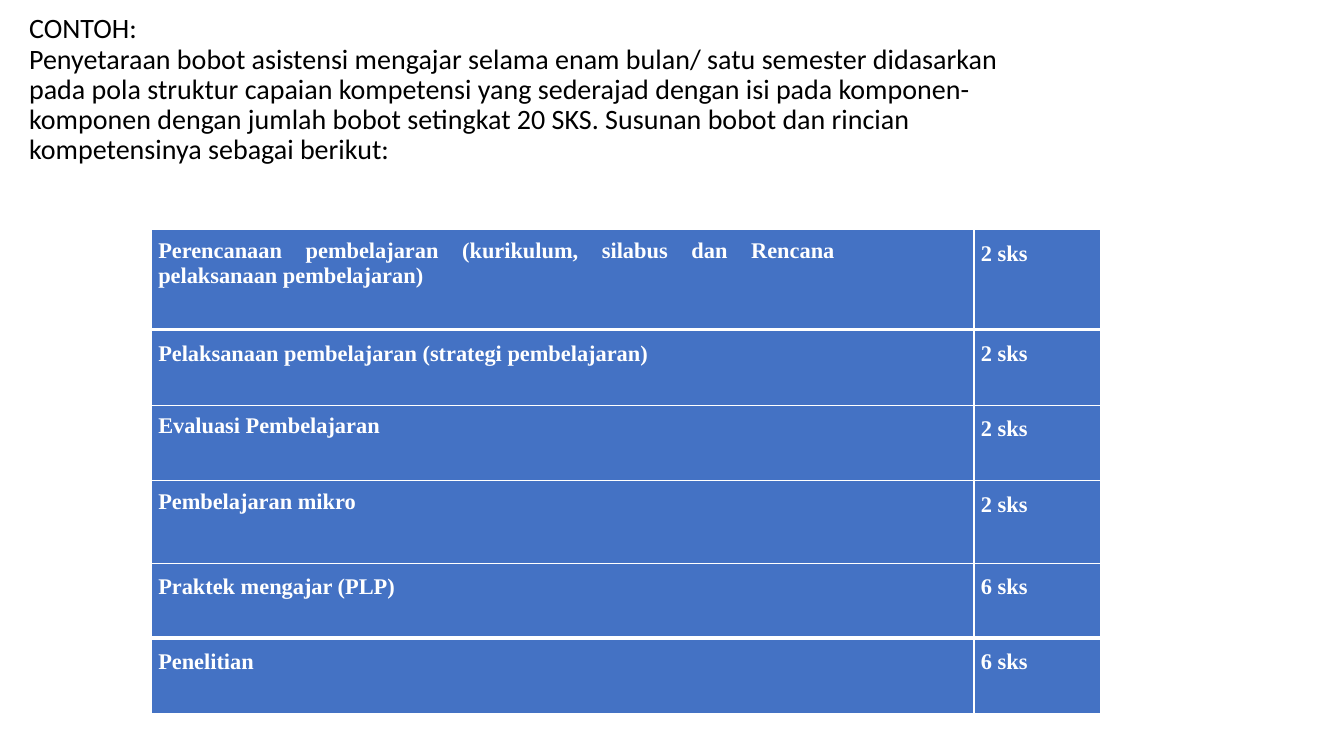
from dataclasses import dataclass

from lxml import etree
from pptx import Presentation
from pptx import util as u
from pptx.dml.color import RGBColor
from pptx.enum import text
from pptx.oxml.ns import qn


@dataclass(frozen=True)
class Theme:
    ink: str = "000000"
    cell: str = "4472C4"
    paper: str = "FFFFFF"
    intro_font: str = "Calibri"
    table_font: str = "Times New Roman"
    intro_size: int = 20
    table_size: int = 16
    thin: int = 1
    thick: int = 3


THEME = Theme()

INTRO = [
    "CONTOH:",
    "Penyetaraan bobot asistensi mengajar selama enam bulan/ satu semester "
    "didasarkan pada pola struktur capaian kompetensi yang sederajad dengan isi "
    "pada komponen- komponen dengan jumlah bobot setingkat 20 SKS. Susunan bobot "
    "dan rincian kompetensinya sebagai berikut:",
]

# Component, weight, row height (in), space above component (pt)
ROWS = [
    ("Perencanaan pembelajaran (kurikulum, silabus dan Rencana "
     "pelaksanaan pembelajaran)", "2 sks", 0.99, 6),
    ("Pelaksanaan pembelajaran (strategi pembelajaran)", "2 sks", 0.75, 13),
    ("Evaluasi Pembelajaran", "2 sks", 0.75, 12),
    ("Pembelajaran mikro", "2 sks", 0.82, 12),
    ("Praktek mengajar (PLP)", "6 sks", 0.74, 13),
    ("Penelitian", "6 sks", 0.75, 13),
]
COLUMNS = (8.16, 1.26)
THICK_BELOW = (0, 4)  # rows followed by a heavy rule


def add_run(p, words, font, size, color, bold=False):
    r = p.add_run()
    r.text = words
    r.font.name = font
    r.font.size = u.Pt(size)
    r.font.bold = bold
    r.font.color.rgb = RGBColor.from_string(color)


def set_borders(cell, top, bottom):
    tc_pr = cell._tc.get_or_add_tcPr()
    widths = {"L": THEME.thin, "R": THEME.thin, "T": top, "B": bottom}
    for i, (side, width) in enumerate(widths.items()):
        ln = etree.Element(qn(f"a:ln{side}"), w=str(u.Pt(width)))
        fill = etree.SubElement(ln, qn("a:solidFill"))
        etree.SubElement(fill, qn("a:srgbClr"), val=THEME.paper)
        tc_pr.insert(i, ln)


def fill_cell(cell, words, above, leading, right=0.0):
    cell.fill.solid()
    cell.fill.fore_color.rgb = RGBColor.from_string(THEME.cell)
    cell.margin_left, cell.margin_right = u.Inches(0.07), u.Inches(right)
    cell.margin_top, cell.margin_bottom = u.Pt(above), 0
    cell.vertical_anchor = text.MSO_ANCHOR.TOP
    p = cell.text_frame.paragraphs[0]
    p.line_spacing = u.Pt(leading)
    if right:
        p.alignment = text.PP_ALIGN.JUSTIFY
    add_run(p, words, THEME.table_font, THEME.table_size, THEME.paper, True)


def add_intro(slide, left, top, width, height):
    sp = slide.shapes.add_textbox(*map(u.Inches, (left, top, width, height)))
    tf = sp.text_frame
    tf.word_wrap = True
    tf.vertical_anchor = text.MSO_ANCHOR.MIDDLE
    p = tf.paragraphs[0]
    p.line_spacing = 0.9
    for i, words in enumerate(INTRO):
        if i:
            p.add_line_break()
        add_run(p, words, THEME.intro_font, THEME.intro_size, THEME.ink)


def add_weights(slide, left, top, width, height):
    box = map(u.Inches, (left, top, width, height))
    table = slide.shapes.add_table(len(ROWS), len(COLUMNS), *box).table
    table.first_row = table.horz_banding = False
    for column, share in zip(table.columns, COLUMNS):
        column.width = u.Inches(width * share / sum(COLUMNS))
    for i, (component, weight, row_height, above) in enumerate(ROWS):
        table.rows[i].height = u.Inches(height * row_height / sum(r[2] for r in ROWS))
        # The two-line component is justified to a narrower measure
        leading, right = (18, 1.38) if i == 0 else (above, 0)
        fill_cell(table.cell(i, 0), component, above, leading, right)
        fill_cell(table.cell(i, 1), weight, 13, 13)
        rule_above = THEME.thick if i - 1 in THICK_BELOW else THEME.thin
        rule_below = THEME.thick if i in THICK_BELOW else THEME.thin
        for cell in table.rows[i].cells:
            set_borders(cell, rule_above, rule_below)


def main():
    prs = Presentation()
    prs.slide_width, prs.slide_height = u.Inches(13.33), u.Inches(7.5)
    slide = prs.slides.add_slide(prs.slide_layouts[6])
    add_intro(slide, 0.19, 0.17, 9.88, 1.45)
    add_weights(slide, 1.5, 2.28, 9.42, 4.8)
    prs.save("out.pptx")


if __name__ == "__main__":
    main()
